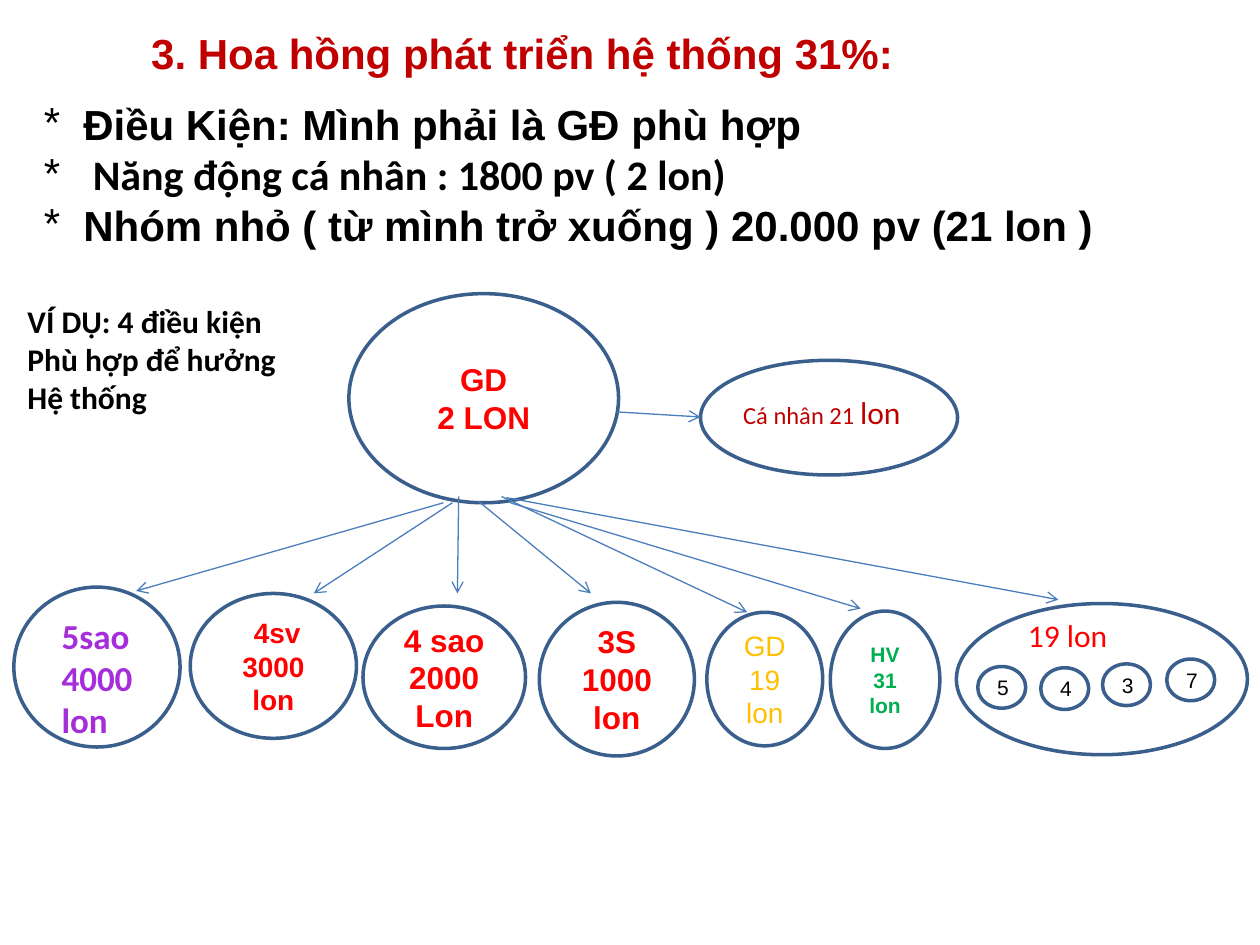
from dataclasses import dataclass

from lxml.etree import SubElement
from pptx import Presentation
from pptx.dml.color import RGBColor
from pptx.enum.shapes import MSO_CONNECTOR, MSO_SHAPE
from pptx.enum.text import MSO_ANCHOR, MSO_AUTO_SIZE, PP_ALIGN
from pptx.oxml import parse_xml
from pptx.oxml.ns import nsdecls, qn
from pptx.util import Pt


@dataclass(frozen=True)
class Theme:
    sans: str = "Arial"
    body: str = "Calibri"
    black: str = "000000"
    dark_red: str = "C00000"
    red: str = "FF0000"
    green: str = "00B050"
    gold: str = "FFC000"
    purple: str = "A52EDA"
    outline: str = "3A5F8C"
    arrow: str = "4B7EBC"
    heading: float = 24
    large: float = 20
    normal: float = 18
    medium: float = 16
    small: float = 14
    tiny: float = 12


THEME = Theme()


@dataclass(frozen=True)
class Box:
    left: float
    top: float
    width: float
    height: float

    def lengths(self) -> tuple:
        return Pt(self.left), Pt(self.top), Pt(self.width), Pt(self.height)


@dataclass(frozen=True)
class Style:
    size: float
    color: str
    font: str = THEME.sans
    bold: bool = False


@dataclass(frozen=True)
class Oval:
    box: Box
    lines: tuple = ()
    style: Style | None = None


@dataclass(frozen=True)
class Arrow:
    start: tuple[float, float]
    end: tuple[float, float]


HEADING = Style(THEME.heading, THEME.dark_red, bold=True)
CONDITION = Style(THEME.heading, THEME.black, bold=True)
CONDITION_BODY = Style(THEME.heading, THEME.black, THEME.body, True)
EXAMPLE = Style(THEME.normal, THEME.black, THEME.body, True)
PERSONAL = Style(THEME.small, THEME.dark_red, THEME.body)
FIVE_STAR = Style(THEME.large, THEME.purple, THEME.body, True)
GROUP = Style(THEME.normal, THEME.red, THEME.body)
STRONG_RED = Style(THEME.normal, THEME.red, bold=True)
FOUR_STAR = Style(THEME.medium, THEME.red, bold=True)
DIRECTOR = Style(THEME.medium, THEME.gold)
MEMBER = Style(THEME.tiny, THEME.green, bold=True)
DIGIT = Style(THEME.tiny, THEME.black)

CONDITIONS = (
    ("Điều Kiện: Mình phải là GĐ phù hợp", CONDITION),
    (" Năng động cá nhân : 1800 pv ( 2 lon)", CONDITION_BODY),
    ("Nhóm nhỏ ( từ mình trở xuống ) 20.000 pv (21 lon )", CONDITION),
)
OVALS = (
    Oval(Box(199.4, 167.8, 154.1, 119.5), ("GD", "2 LON"), STRONG_RED),
    Oval(Box(400.3, 205.9, 146.9, 65.5)),
    Oval(Box(7.9, 335.5, 95, 91.4)),
    Oval(Box(108.7, 339.1, 95, 82.8), (" 4sv", "3000", "lon"), FOUR_STAR),
    Oval(Box(207.4, 346.3, 92.9, 81.4), ("4 sao", "2000 Lon"), STRONG_RED),
    Oval(Box(308.2, 344.2, 88.6, 87.8), ("3S", "1000 lon"), STRONG_RED),
    Oval(Box(403.9, 349.9, 66.2, 76.3), ("GD", "19 lon"), DIRECTOR),
    Oval(Box(474.5, 349.2, 62.6, 78.5), ("HV", "31 lon"), MEMBER),
    Oval(Box(546.5, 344.9, 166.3, 86.4)),
)
DIGIT_PLACES = {"5": (558.7, 380.9), "4": (594.7, 381.6),
                "3": (630, 379.4), "7": (666.7, 376.6)}
ARROWS = (
    Arrow((352.8, 235.4), (400.3, 238.3)),
    Arrow((253.4, 287.3), (77.8, 337.7)),
    Arrow((258.5, 287.3), (179.3, 339.1)),
    Arrow((262.1, 283.7), (261.4, 339.1)),
    Arrow((273.6, 286.6), (337.7, 339.1)),
    Arrow((286.6, 283.7), (427, 349.9)),
    Arrow((291.6, 287.3), (491.8, 347.8)),
    Arrow((289.4, 284.4), (604.8, 342.7)),
)


def apply_style(paragraph, style: Style) -> None:
    font = paragraph.font
    font.name, font.size, font.bold = style.font, Pt(style.size), style.bold
    font.color.rgb = RGBColor.from_string(style.color)


def write_lines(frame, lines, align=PP_ALIGN.LEFT) -> None:
    """Fill a text frame with one paragraph per (text, style) pair."""
    for index, (text, style) in enumerate(lines):
        paragraph = frame.paragraphs[0] if index == 0 else frame.add_paragraph()
        paragraph.text = text
        paragraph.alignment = align
        apply_style(paragraph, style)


def add_text(page, box: Box, lines):
    frame = page.shapes.add_textbox(*box.lengths()).text_frame
    frame.word_wrap = True
    write_lines(frame, lines)
    return frame


def add_star_bullet(paragraph, indent: float) -> None:
    properties = paragraph._p.get_or_add_pPr()
    properties.set("marL", str(Pt(indent)))
    properties.set("indent", str(-Pt(indent)))
    properties.insert(0, parse_xml(f'<a:buFont {nsdecls("a")} typeface="{THEME.sans}"/>'))
    properties.insert(1, parse_xml(f'<a:buChar {nsdecls("a")} char="*"/>'))


def add_oval(page, oval: Oval) -> None:
    shape = page.shapes.add_shape(MSO_SHAPE.OVAL, *oval.box.lengths())
    shape.shadow.inherit = False
    shape.fill.background()
    shape.line.color.rgb = RGBColor.from_string(THEME.outline)
    shape.line.width = Pt(2)
    frame = shape.text_frame
    frame.word_wrap = True
    frame.vertical_anchor = MSO_ANCHOR.MIDDLE
    write_lines(frame, [(line, oval.style) for line in oval.lines], PP_ALIGN.CENTER)


def add_arrow(page, arrow: Arrow) -> None:
    ends = [Pt(value) for value in arrow.start + arrow.end]
    connector = page.shapes.add_connector(MSO_CONNECTOR.STRAIGHT, *ends)
    connector.line.color.rgb = RGBColor.from_string(THEME.arrow)
    connector.line.width = Pt(0.75)
    SubElement(connector.line._get_or_add_ln(), qn("a:tailEnd"), type="arrow")
    SubElement(connector._element.spPr, qn("a:effectLst"))


def set_title(page, box: Box, text: str) -> None:
    title = page.shapes.title
    title.left, title.top, title.width, title.height = box.lengths()
    frame = title.text_frame
    frame.word_wrap = False
    frame.auto_size = MSO_AUTO_SIZE.NONE
    frame.vertical_anchor = MSO_ANCHOR.TOP
    write_lines(frame, [(text, HEADING)])


def main() -> None:
    deck = Presentation()
    deck.slide_width, deck.slide_height = Pt(720), Pt(540)
    page = deck.slides.add_slide(deck.slide_layouts[5])

    set_title(page, Box(79.2, 12.2, 442.1, 36), "3. Hoa hồng phát triển hệ thống 31%:")
    conditions = add_text(page, Box(18, 52.6, 685.4, 94.3), CONDITIONS)
    for paragraph in conditions.paragraphs:
        add_star_bullet(paragraph, 22.5)

    for oval in OVALS:
        add_oval(page, oval)
    for digit, (left, top) in DIGIT_PLACES.items():
        add_oval(page, Oval(Box(left, top, 27.4, 23.8), (digit,), DIGIT))
    for arrow in ARROWS:
        add_arrow(page, arrow)

    example = ("VÍ DỤ: 4 điều kiện", "Phù hợp để hưởng", "Hệ thống")
    add_text(page, Box(8.6, 169.2, 212.4, 72.7), [(line, EXAMPLE) for line in example])
    personal = add_text(page, Box(417.6, 221, 234.7, 28.8), [("Cá nhân 21 ", PERSONAL)])
    span = personal.paragraphs[0].add_run()
    span.text = "lon"
    span.font.size = Pt(THEME.normal)
    add_text(page, Box(28.1, 347.8, 58.3, 79.9),
             [(line, FIVE_STAR) for line in ("5sao", "4000", "lon")])
    add_text(page, Box(580.3, 348.5, 76.3, 28.8), [("19 lon", GROUP)])
    deck.save("out.pptx")


if __name__ == "__main__":
    main()
